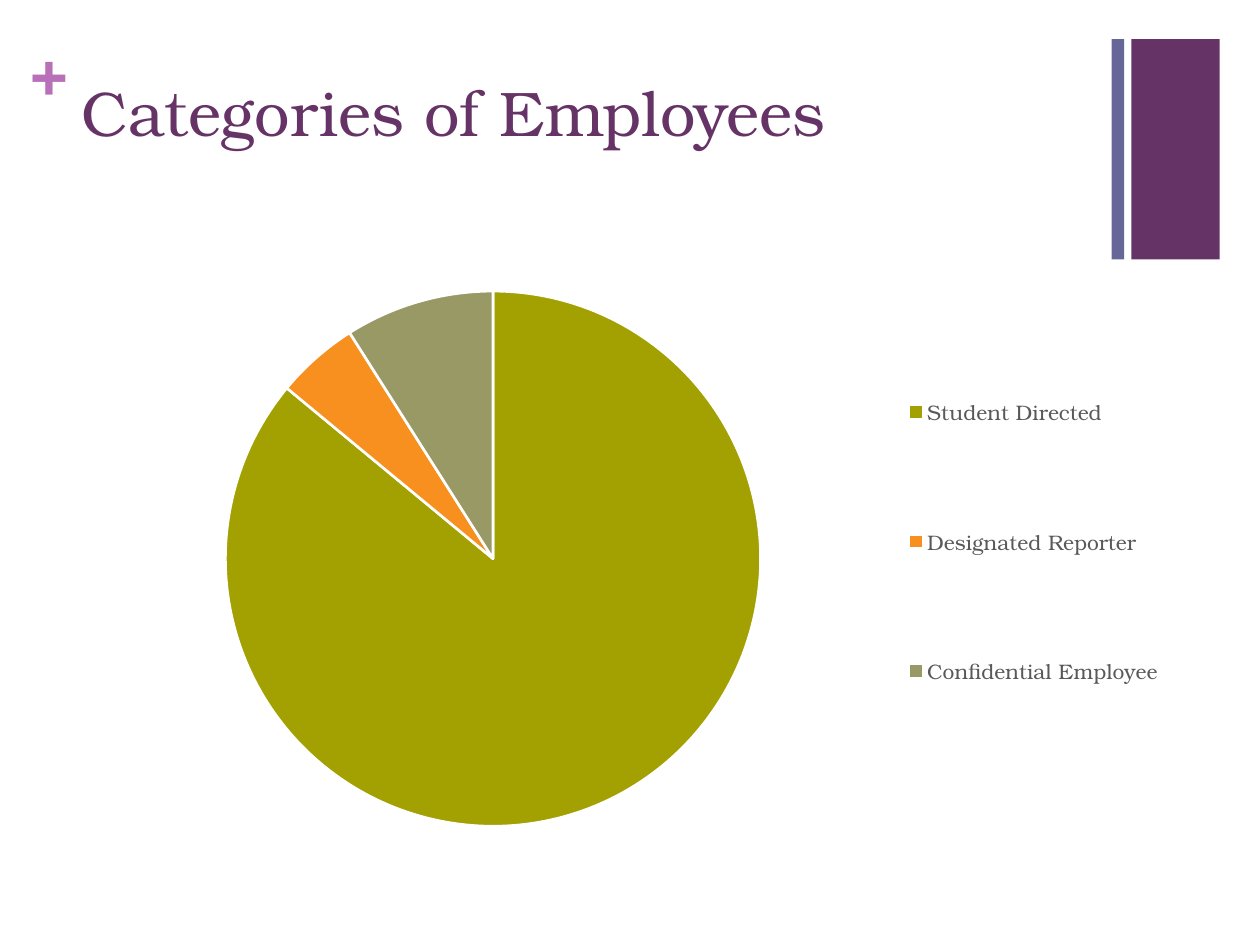
from pptx import Presentation
from pptx.chart import data
from pptx.dml import color
from pptx.enum import chart as kinds, shapes
from pptx.oxml import parse_xml, ns
from pptx.util import Pt

FONT = "TeX Gyre Bonum"
HUES = {"plum": "663366", "blue": "666699", "pink": "B870B8", "grey": "595959",
        "olive": "A3A101", "orange": "F7901E", "sage": "999966", "white": "FFFFFF"}


def rgb(name):
    return color.RGBColor.from_string(HUES[name])


def write(words, left, top, width, height, hue, bold=False, inset=(0, 0), wrap=False):
    box = slide.shapes.add_textbox(Pt(left), Pt(top), Pt(width), Pt(height))
    frame = box.text_frame
    frame.word_wrap = wrap
    frame.margin_left = frame.margin_right = Pt(inset[0])
    frame.margin_top = frame.margin_bottom = Pt(inset[1])
    run = frame.paragraphs[0].add_run()
    run.text = words
    run.font.name = FONT
    run.font.size = Pt(36)
    run.font.bold = bold
    run.font.color.rgb = rgb(hue)


deck = Presentation()
deck.slide_width, deck.slide_height = Pt(720), Pt(540)
slide = deck.slides.add_slide(deck.slide_layouts[6])

for left, width, hue in [(646.5, 50.5, "plum"), (635.2, 7.2, "blue")]:
    bar = slide.shapes.add_shape(shapes.MSO_SHAPE.RECTANGLE,
                                 Pt(left), Pt(22.3), Pt(width), Pt(126))
    bar.shadow.inherit = False
    bar.fill.solid()
    bar.fill.fore_color.rgb = rgb(hue)
    bar.line.fill.background()

write("+", 17.3, 18, 21, 44, "pink", bold=True)
write("Categories of Employees", 39.6, 38.2, 594.7, 87.8, "plum",
      inset=(7.2, 3.6), wrap=True)

parts = [("Student Directed", 86, "olive"),
         ("Designated Reporter", 5, "orange"),
         ("Confidential Employee", 9, "sage")]
feed = data.CategoryChartData()
feed.categories = [name for name, share, hue in parts]
feed.add_series("Series 1", [share for name, share, hue in parts])
pie = slide.shapes.add_chart(kinds.XL_CHART_TYPE.PIE, Pt(39.6), Pt(156.2),
                             Pt(637.2), Pt(326.2), feed).chart
pie.has_title = False
pie.font.name = FONT
pie.font.size = Pt(10)
plot = pie.plots[0]
plot.vary_by_categories = True
for spot, (name, share, hue) in enumerate(parts):
    wedge = plot.series[0].points[spot].format
    wedge.fill.solid()
    wedge.fill.fore_color.rgb = rgb(hue)
    wedge.line.color.rgb = rgb("white")
    wedge.line.width = Pt(1.5)

pie.has_legend = True
key = pie.legend
key.position = kinds.XL_LEGEND_POSITION.RIGHT
key.include_in_layout = False
key.font.name = FONT
key.font.size = Pt(12)
key.font.color.rgb = rgb("grey")

area = pie.element.find(".//" + ns.qn("c:plotArea"))
for host, spot, inner, rect in [
        (area, 0, '<c:layoutTarget val="inner"/>', (0.14, 0.03, 0.48, 0.94)),
        (key.element if hasattr(key, "element") else pie.element.find(".//" + ns.qn("c:legend")),
         1, "", (0.73, 0.04, 0.27, 0.86))]:
    for old in host.findall(ns.qn("c:layout")):
        host.remove(old)
    sides = "".join(f'<c:{tag} val="{size}"/>' for tag, size in zip("xywh", rect))
    modes = '<c:xMode val="edge"/><c:yMode val="edge"/>'
    host.insert(spot, parse_xml(f'<c:layout {ns.nsdecls("c")}><c:manualLayout>'
                                f'{inner}{modes}{sides}</c:manualLayout></c:layout>'))

deck.save("out.pptx")
